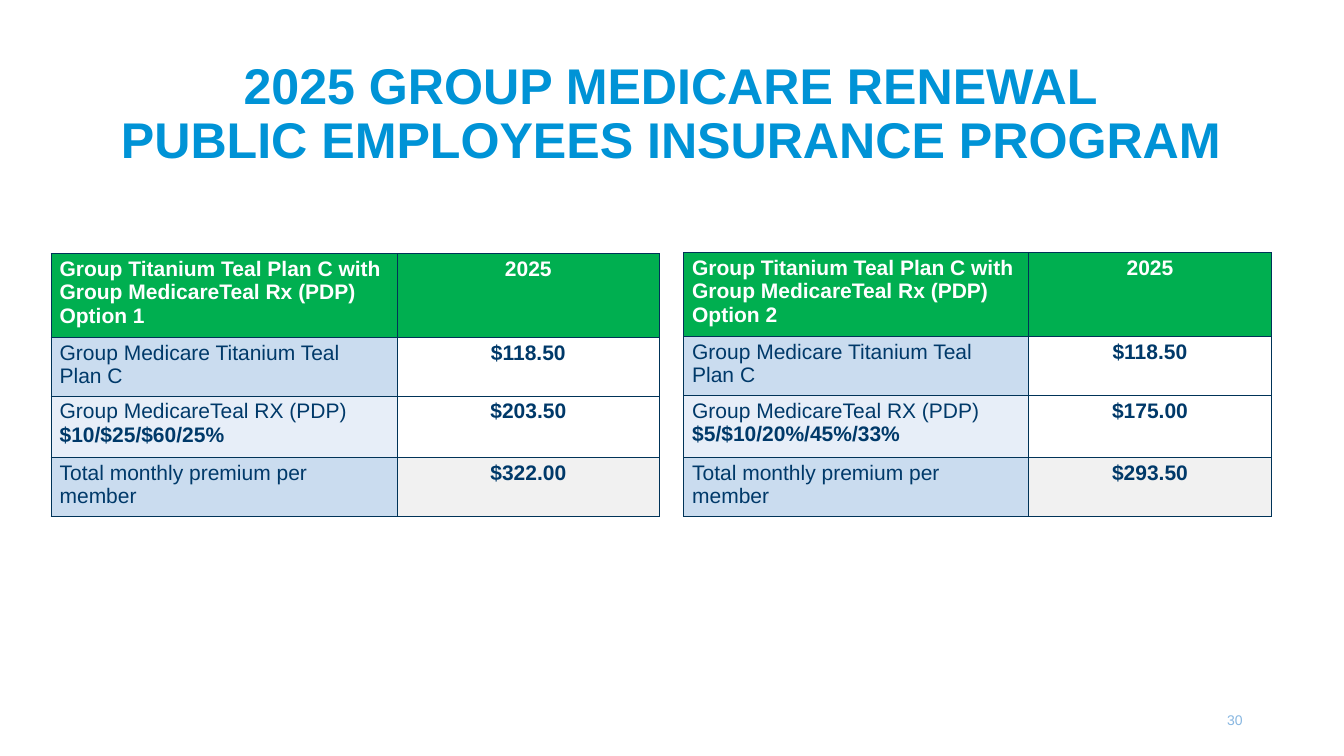
from lxml import etree
from pptx import Presentation
from pptx import util as u
from pptx.dml.color import RGBColor
from pptx.enum import text
from pptx.oxml import ns

SKY = RGBColor(0x00, 0x93, 0xD6)
PALE_SKY = RGBColor(0x88, 0xB7, 0xE1)
NAVY = RGBColor(0x00, 0x39, 0x69)
GREEN = RGBColor(0x00, 0xAF, 0x50)
BLUE_TINT = RGBColor(0xCA, 0xDC, 0xEF)
LIGHT_TINT = RGBColor(0xE7, 0xEE, 0xF8)
GREY = RGBColor(0xF1, 0xF1, 0xF1)
WHITE = RGBColor(0xFF, 0xFF, 0xFF)
BORDER = "003358"

TITLE = "2025 GROUP MEDICARE RENEWAL PUBLIC EMPLOYEES INSURANCE PROGRAM"
LEFT, CENTER = text.PP_ALIGN.LEFT, text.PP_ALIGN.CENTER


def write(paragraph, words, size=18, color=NAVY, bold=False, align=LEFT):
    """Put formatted words into a paragraph."""
    paragraph.alignment = align
    span = paragraph.add_run()
    span.text = words
    span.font.name = "Arial"
    span.font.size = u.Pt(size)
    span.font.bold = bold
    span.font.color.rgb = color


def set_margins(target, left=0, top=0, right=0):
    """Set the insets of a text frame or a cell, with none at the bottom."""
    target.margin_left = u.Inches(left)
    target.margin_top = u.Inches(top)
    target.margin_right = u.Inches(right)
    target.margin_bottom = 0


def add_title(page, left, top, width, height):
    """Place the heading, its first line indented to look centred."""
    title = page.shapes.title
    title.left, title.top = u.Inches(left), u.Inches(top)
    title.width, title.height = u.Inches(width), u.Inches(height)
    frame = title.text_frame
    frame.word_wrap = True
    frame.auto_size = text.MSO_AUTO_SIZE.NONE
    frame.vertical_anchor = text.MSO_ANCHOR.TOP
    set_margins(frame, top=0.1)
    heading = frame.paragraphs[0]
    heading.line_spacing = u.Pt(46.4)
    heading.space_before = u.Pt(0)
    properties = heading._p.get_or_add_pPr()
    properties.set("marL", str(u.Inches(0.01)))
    properties.set("indent", str(u.Inches(1.46)))
    write(heading, TITLE, size=43, color=SKY, bold=True)


def add_page_number(page, number, left, top, width, height):
    """Place the page number in the lower right corner."""
    box = page.shapes.add_textbox(*map(u.Inches, (left, top, width, height)))
    box.text_frame.word_wrap = False
    set_margins(box.text_frame, left=0.01, top=0.01)
    write(box.text_frame.paragraphs[0], number, size=12, color=PALE_SKY)


def set_borders(cell):
    """Draw a thin navy line on all four sides of a cell."""
    properties = cell._tc.get_or_add_tcPr()
    for position, side in enumerate(("lnL", "lnR", "lnT", "lnB")):
        line = etree.Element(ns.qn(f"a:{side}"), w=str(u.Pt(1)))
        fill = etree.SubElement(line, ns.qn("a:solidFill"))
        etree.SubElement(fill, ns.qn("a:srgbClr"), val=BORDER)
        properties.insert(position, line)


def fill_cell(cell, fill, lines, right=0, **style):
    """Fill one cell with lines given as (words, bold) pairs."""
    set_margins(cell, left=0 if style.get("align") == CENTER else 0.1, top=0.04, right=right)
    cell.vertical_anchor = text.MSO_ANCHOR.TOP
    if fill is None:
        cell.fill.background()
    else:
        cell.fill.solid()
        cell.fill.fore_color.rgb = fill
    set_borders(cell)
    frame = cell.text_frame
    for index, (words, bold) in enumerate(lines):
        paragraph = frame.add_paragraph() if index else frame.paragraphs[0]
        write(paragraph, words, bold=bold, **style)


def add_premium_table(page, left, top, columns, heights, option, copays, prices):
    """Place the premium table of one plan option."""
    frame = page.shapes.add_table(
        len(heights), len(columns), u.Inches(left), u.Inches(top),
        u.Inches(sum(columns)), u.Inches(sum(heights)))
    table = frame.table
    for column, width in zip(table.columns, columns):
        column.width = u.Inches(width)
    for row, height in zip(table.rows, heights):
        row.height = u.Inches(height)

    header = f"Group Titanium Teal Plan C with Group MedicareTeal Rx (PDP) Option {option}"
    fill_cell(table.cell(0, 0), GREEN, [(header, True)], color=WHITE)
    fill_cell(table.cell(0, 1), GREEN, [("2025", True)], color=WHITE, align=CENTER)

    body = (
        ([("Group Medicare Titanium Teal Plan C", False)], BLUE_TINT, None),
        ([("Group MedicareTeal RX (PDP)", False), (copays, True)], LIGHT_TINT, None),
        ([("Total monthly premium per member", False)], BLUE_TINT, GREY),
    )
    for row, ((label, label_fill, price_fill), price) in enumerate(zip(body, prices), 1):
        fill_cell(table.cell(row, 0), label_fill, label, right=0.4)
        fill_cell(table.cell(row, 1), price_fill, [(price, True)], align=CENTER)


def main():
    """Build and save the renewal slide."""
    deck = Presentation()
    deck.slide_width, deck.slide_height = u.Inches(16), u.Inches(9)
    page = deck.slides.add_slide(deck.slide_layouts[5])
    add_title(page, 1.43, 0.62, 13.2, 1.39)
    add_page_number(page, "30", 14.6, 8.46, 0.21, 0.23)
    add_premium_table(page, 0.61, 3.02, (4.12, 3.12), (1, 0.7, 0.73, 0.7), 1,
                      "$10/$25/$60/25%", ("$118.50", "$203.50", "$322.00"))
    add_premium_table(page, 8.14, 3.01, (4.1, 2.9), (1, 0.7, 0.74, 0.7), 2,
                      "$5/$10/20%/45%/33%", ("$118.50", "$175.00", "$293.50"))
    deck.save("out.pptx")


if __name__ == "__main__":
    main()
